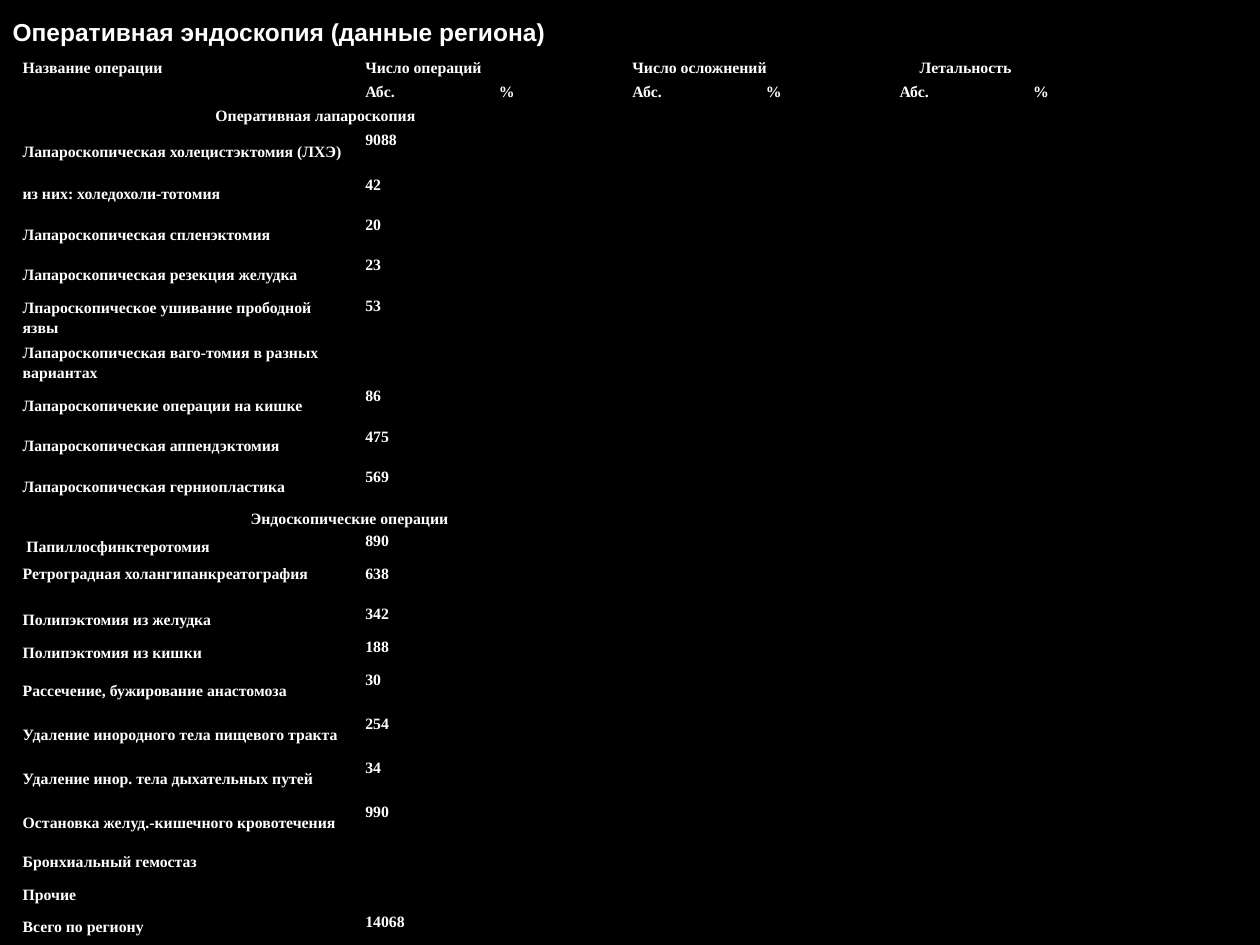
from lxml import etree
from pptx import Presentation
from pptx.dml.color import RGBColor
from pptx.enum.text import MSO_ANCHOR, MSO_AUTO_SIZE, PP_ALIGN
from pptx.oxml.ns import qn
from pptx.util import Inches, Pt

TOP, MIDDLE = MSO_ANCHOR.TOP, MSO_ANCHOR.MIDDLE
LEFT, FIT = PP_ALIGN.LEFT, MSO_AUTO_SIZE.SHAPE_TO_FIT_TEXT

COLORS = {"background": "000000", "border": "000000", "text": "FFFFFF"}
TITLE_FONT = {"name": "Arial", "size": Pt(14), "bold": True}
CELL_FONT = {"name": "Times New Roman", "size": Pt(9), "bold": True}
CELL_MARGINS = {"margin_left": Inches(0.06), "margin_right": Inches(0.06),
                "margin_top": Inches(0.01), "margin_bottom": 0}

TITLE = "Оперативная эндоскопия (данные региона)"
HEADERS = ["Название операции", "Число операций", "Число осложнений", "Летальность"]
LAPAROSCOPY = [
    ("Лапароскопическая холецистэктомия (ЛХЭ)", "9088", 3.6),
    ("из них: холедохоли-тотомия", "42", 3.2),
    ("Лапароскопическая спленэктомия", "20", 3.2),
    ("Лапароскопическая резекция желудка", "23", 3.2),
    ("Лпароскопическое ушивание прободной язвы", "53", 3.6),
    ("Лапароскопическая ваго-томия в разных вариантах", "", 3.6),
    ("Лапароскопичекие операции на кишке", "86", 3.2),
    ("Лапароскопическая аппендэктомия", "475", 3.2),
    ("Лапароскопическая герниопластика", "569", 3.2),
]
ENDOSCOPY = [
    ("Папиллосфинктеротомия", "890", 2.6),
    ("Ретроградная холангипанкреатография", "638", 3.2),
    ("Полипэктомия из желудка", "342", 2.6),
    ("Полипэктомия из кишки", "188", 2.6),
    ("Рассечение, бужирование анастомоза", "30", 3.5),
    ("Удаление инородного тела пищевого тракта", "254", 3.5),
    ("Удаление инор. тела дыхательных путей", "34", 3.5),
    ("Остановка желуд.-кишечного кровотечения", "990", 3.5),
    ("Бронхиальный гемостаз", "", 2.6),
    ("Прочие", "", 2.6),
    ("Всего по региону", "14068", 2.6),
]
SECTIONS = [("Оперативная лапароскопия", 15.3, TOP, LAPAROSCOPY),
            ("Эндоскопические операции", 18.1, MIDDLE, ENDOSCOPY)]
INDENTS = {"Летальность": 1.6, "Папиллосфинктеротомия": 0.3}
TOP_ANCHORED = {"Ретроградная холангипанкреатография"}
HEADER_HEIGHT = 1.9
COLUMN_WIDTHS = [27.2] + [10.6] * 6


class Deck:
    COLUMNS, ROWS = 100, 75

    def __init__(self):
        self.prs = Presentation()
        self.prs.slide_width, self.prs.slide_height = Inches(10), Inches(7.5)
        self.s = self.prs.slides.add_slide(self.prs.slide_layouts[5])
        fill = self.s.background.fill
        fill.solid()
        fill.fore_color.rgb = RGBColor.from_string(COLORS["background"])

    def x(self, columns):
        return round(self.prs.slide_width * columns / self.COLUMNS)

    def y(self, rows):
        return round(self.prs.slide_height * rows / self.ROWS)

    def apply(self, target, values):
        for name, value in values.items():
            setattr(target, name, value)

    def run(self, p, text, font):
        r = p.add_run()
        r.text = text
        self.apply(r.font, font)
        r.font.color.rgb = RGBColor.from_string(COLORS["text"])

    def title(self, text, left, top, width, height):
        sp = self.s.shapes.title
        self.apply(sp, {"left": self.x(left), "top": self.y(top),
                        "width": self.x(width), "height": self.y(height)})
        tf = sp.text_frame
        self.apply(tf, {"word_wrap": False, "auto_size": FIT, "vertical_anchor": MIDDLE})
        p = tf.paragraphs[0]
        p.alignment = LEFT
        self.run(p, text, TITLE_FONT)

    def table(self, left, top, widths, heights):
        frame = self.s.shapes.add_table(len(heights), len(widths), self.x(left), self.y(top),
                                        self.x(sum(widths)), self.y(sum(heights)))
        table = frame.table
        self.apply(table, {"first_row": False, "horz_banding": False})
        for column, width in zip(table.columns, widths):
            column.width = self.x(width)
        for row, height in zip(table.rows, heights):
            row.height = self.y(height)
        for cell in table.iter_cells():
            self.apply(cell, CELL_MARGINS)
            self.borders(cell)
            cell.fill.background()
            end = cell.text_frame.paragraphs[0]._p.get_or_add_endParaRPr()
            end.set("sz", str(round(CELL_FONT["size"].pt * 100)))
        return table

    def borders(self, cell):
        tc_pr = cell._tc.get_or_add_tcPr()
        for side in ("a:lnL", "a:lnR", "a:lnT", "a:lnB"):
            line = etree.SubElement(tc_pr, qn(side), w=str(Pt(1)))
            fill = etree.SubElement(line, qn("a:solidFill"))
            etree.SubElement(fill, qn("a:srgbClr"), val=COLORS["border"])

    def cell(self, cell, text, anchor=TOP, indent=0):
        cell.vertical_anchor = anchor
        p = cell.text_frame.paragraphs[0]
        p.line_spacing = 1.15
        if indent:
            p._p.get_or_add_pPr().set("marL", str(self.x(indent)))
        if text:
            self.run(p, text, CELL_FONT)


def main():
    deck = Deck()
    deck.title(TITLE, 0, 0.8, 44.6, 3.4)

    heights = [HEADER_HEIGHT] * 2
    for _, _, _, operations in SECTIONS:
        heights += [HEADER_HEIGHT] + [height for _, _, height in operations]
    table = deck.table(1.2, 4.4, COLUMN_WIDTHS, heights)

    table.cell(0, 0).merge(table.cell(1, 0))
    deck.cell(table.cell(0, 0), HEADERS[0])
    for col, header in zip((1, 3, 5), HEADERS[1:]):
        table.cell(0, col).merge(table.cell(0, col + 1))
        deck.cell(table.cell(0, col), header, indent=INDENTS.get(header, 0))
        deck.cell(table.cell(1, col), "Абс.")
        deck.cell(table.cell(1, col + 1), "%")

    row = 2
    for heading, indent, anchor, operations in SECTIONS:
        table.cell(row, 0).merge(table.cell(row, len(COLUMN_WIDTHS) - 1))
        deck.cell(table.cell(row, 0), heading, anchor, indent)
        for row, (name, count, _) in enumerate(operations, row + 1):
            name_anchor = TOP if name in TOP_ANCHORED else MIDDLE
            deck.cell(table.cell(row, 0), name, name_anchor, INDENTS.get(name, 0))
            deck.cell(table.cell(row, 1), count)
        row += 1

    deck.prs.save("out.pptx")


if __name__ == "__main__":
    main()
